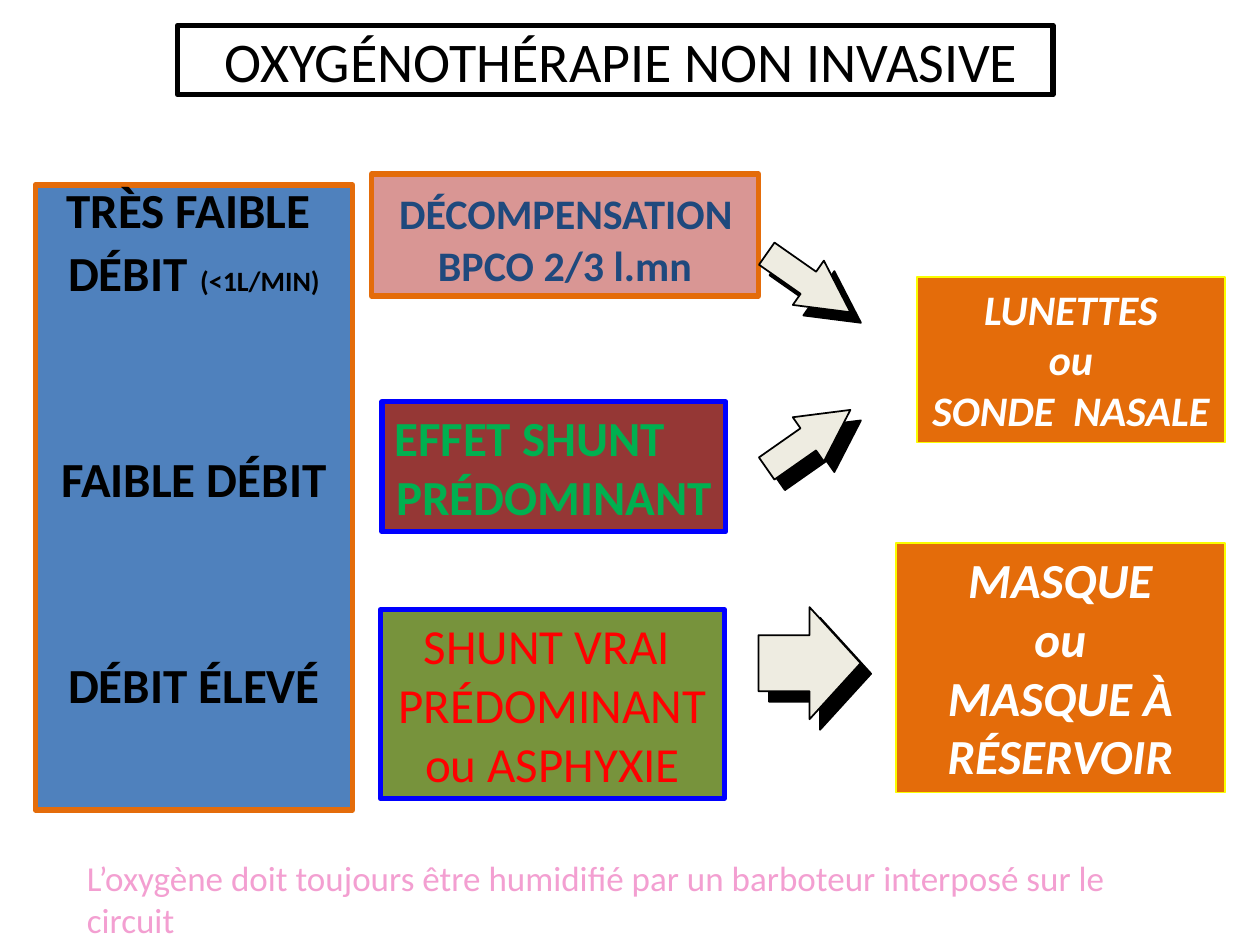
from lxml.etree import SubElement
from pptx import Presentation
from pptx.dml.color import RGBColor
from pptx.enum.shapes import MSO_SHAPE as Shape
from pptx.enum.text import MSO_ANCHOR as Anchor, PP_ALIGN as Align
from pptx.oxml.ns import qn
from pptx.util import Cm, Pt

BLACK = RGBColor(0x00, 0x00, 0x00)
WHITE = RGBColor(0xFF, 0xFF, 0xFF)
BLUE = RGBColor(0x4F, 0x81, 0xBD)
NAVY = RGBColor(0x1F, 0x49, 0x7D)
PURE_BLUE = RGBColor(0x00, 0x00, 0xFF)
ORANGE = RGBColor(0xE4, 0x6C, 0x0A)
ROSE = RGBColor(0xD9, 0x96, 0x94)
MAROON = RGBColor(0x95, 0x37, 0x35)
OLIVE = RGBColor(0x77, 0x93, 0x3C)
GREEN = RGBColor(0x00, 0xB0, 0x50)
RED = RGBColor(0xFF, 0x00, 0x00)
YELLOW = RGBColor(0xFA, 0xFD, 0x00)
CREAM = RGBColor(0xEE, 0xEC, 0xE1)
PINK = RGBColor(0xF3, 0x9F, 0xD1)
FONT = "Calibri"


def add_block(page, kind, box, fill, line, weight):
    block = page.shapes.add_shape(kind, *[Cm(length) for length in box])
    block.shadow.inherit = False
    if fill is None:
        block.fill.background()
    else:
        block.fill.solid()
        block.fill.fore_color.rgb = fill
    block.line.color.rgb = line
    block.line.width = Pt(weight)
    return block


def style_span(span, size, color, bold=False, italic=False):
    span.font.name = FONT
    span.font.size = Pt(size)
    span.font.color.rgb = color
    span.font.bold = bold
    span.font.italic = italic


def write(block, lines, size, color, bold=False, italic=False,
          align=Align.CENTER, anchor=Anchor.TOP, wrap=True):
    frame = block.text_frame
    frame.word_wrap = wrap
    frame.vertical_anchor = anchor
    frame.text = "\n".join(lines)
    for para in frame.paragraphs:
        para.alignment = align
        for span in para.runs:
            style_span(span, size, color, bold, italic)
    return frame.paragraphs


def add_title(page, box):
    block = add_block(page, Shape.RECTANGLE, box, None, BLACK, 3)
    write(block, [" OXYGÉNOTHÉRAPIE NON INVASIVE"], 32, BLACK, anchor=Anchor.MIDDLE)


def add_flow_panel(page, box):
    block = add_block(page, Shape.RECTANGLE, box, BLUE, ORANGE, 3)
    lines = ["TRÈS FAIBLE ", "DÉBIT", "FAIBLE DÉBIT", "DÉBIT ÉLEVÉ"]
    paras = write(block, lines, 28, BLACK, bold=True)
    for para, gap in zip(paras[1:], (5.6, 84, 84)):
        para.space_before = Pt(gap)
    for para in paras[:2]:
        para.line_spacing = 0.8
    for text, size in ((" ", 32), ("(<1L/MIN)", 16)):
        span = paras[1].add_run()
        span.text = text
        style_span(span, size, BLACK, bold=True)


def add_indications(page, box):
    left, top, width, _ = box
    block = add_block(page, Shape.RECTANGLE, (left, top, width, 2.46), ROSE, ORANGE, 3)
    paras = write(block, [" ", "BPCO 2/3 l.mn"], 24, NAVY, bold=True)
    style_span(paras[0].runs[0], 28, NAVY)
    span = paras[0].add_run()
    span.text = "DÉCOMPENSATION "
    style_span(span, 24, NAVY, bold=True)

    effect = add_block(page, Shape.RECTANGLE, (left + 0.21, top + 4.59, 6.93, 2.62),
                       MAROON, PURE_BLUE, 3)
    paras = write(effect, ["EFFET SHUNT", "PRÉDOMINANT"], 28, GREEN, bold=True, wrap=False)
    paras[0].alignment = Align.LEFT

    shunt = add_block(page, Shape.RECTANGLE, (left + 0.18, top + 8.78, 6.93, 3.81),
                      OLIVE, PURE_BLUE, 3)
    write(shunt, ["SHUNT VRAI ", "PRÉDOMINANT", "ou ASPHYXIE"], 28, RED, wrap=False)


def add_hard_shadow(block):
    effects = block._element.spPr.find(qn("a:effectLst"))
    shadow = SubElement(effects, qn("a:outerShdw"), dist=str(Pt(8.5)),
                        dir="2700000", algn="ctr", rotWithShape="0")
    SubElement(shadow, qn("a:srgbClr"), val=str(BLACK))


def add_arrows(page, box):
    left, top, width, _ = box
    arrows = [
        (0, 0, 1.09, 35, 0.95),
        (0, 3.15, 1.09, -35, 0.95),
        (0.02, 7.08, 2.26, 0, 0.5),
    ]
    for dx, dy, height, angle, head in arrows:
        arrow = add_block(page, Shape.RIGHT_ARROW, (left + dx, top + dy, width, height),
                          CREAM, BLACK, 1)
        arrow.adjustments[0] = 0.5
        arrow.adjustments[1] = head
        arrow.rotation = angle
        add_hard_shadow(arrow)


def add_devices(page, box):
    left, top, width, _ = box
    devices = [
        (0, 6.2, 3.33, 24, ["LUNETTES", "ou", "SONDE  NASALE"]),
        (5.36, width, 5.03, 28, ["MASQUE", "ou", "MASQUE À RÉSERVOIR"]),
    ]
    for dy, breadth, height, size, lines in devices:
        place = (left + width - breadth, top + dy, breadth, height)
        block = add_block(page, Shape.RECTANGLE, place, ORANGE, YELLOW, 1)
        write(block, lines, size, WHITE, bold=True, italic=True)


def add_footnote(page, box):
    block = add_block(page, Shape.RECTANGLE, box, WHITE, WHITE, 1)
    text = "L’oxygène doit toujours être humidifié par un barboteur interposé sur le circuit"
    write(block, [text], 20, PINK, align=Align.LEFT)


def main():
    deck = Presentation()
    deck.slide_width = Cm(25.4)
    deck.slide_height = Cm(19.05)
    page = deck.slides.add_slide(deck.slide_layouts[6])
    add_title(page, (3.58, 0.51, 17.65, 1.4))
    add_flow_panel(page, (0.71, 3.73, 6.4, 12.6))
    add_indications(page, (7.49, 3.51, 7.8, 12.59))
    add_devices(page, (18.06, 5.59, 6.63, 10.39))
    add_arrows(page, (15.27, 5.16, 2.06, 9.34))
    add_footnote(page, (1.5, 17.15, 21.95, 1.12))
    deck.save("out.pptx")


if __name__ == "__main__":
    main()
